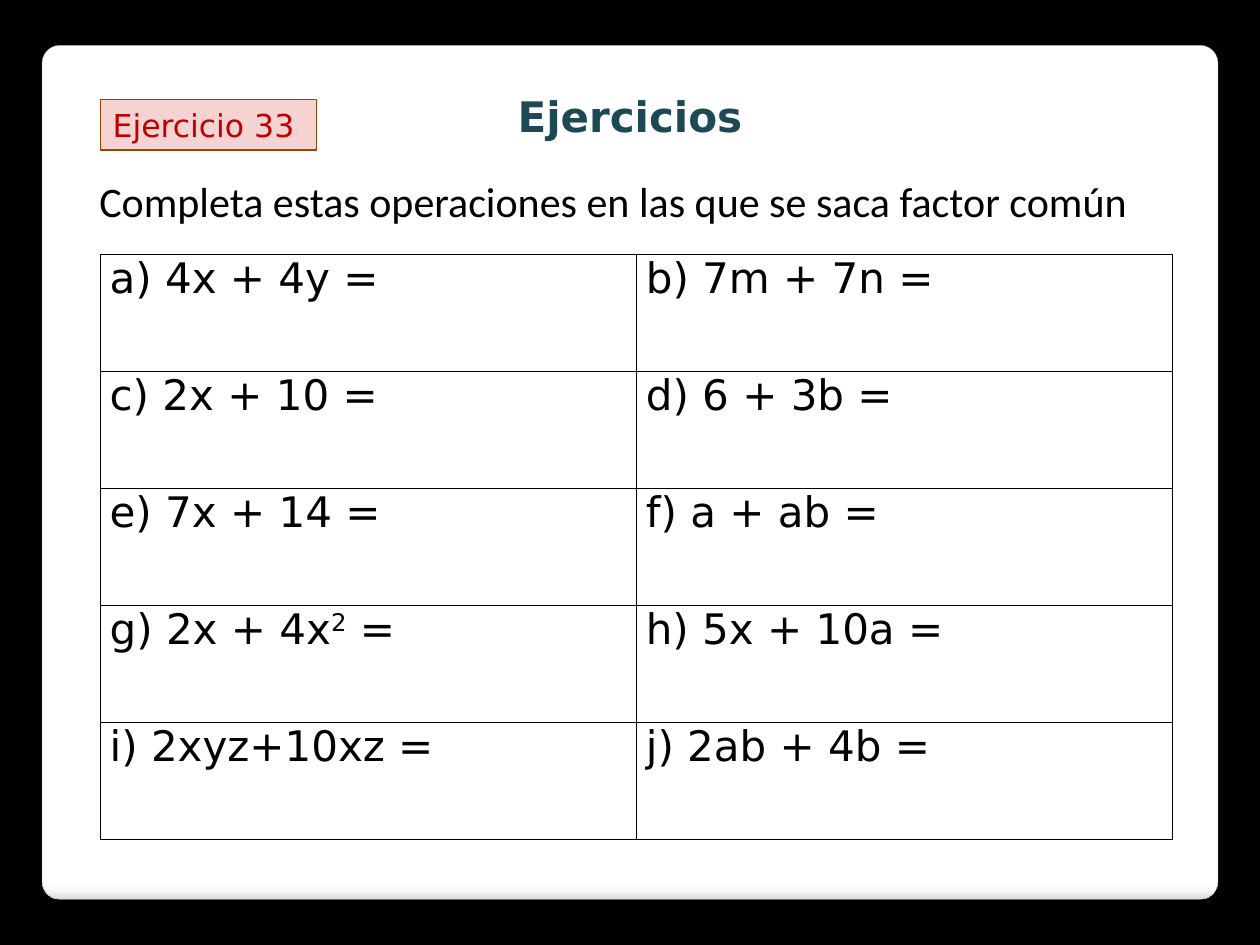
from lxml import etree
from pptx import Presentation
from pptx.dml.color import RGBColor
from pptx.enum.shapes import MSO_SHAPE
from pptx.enum.text import PP_ALIGN
from pptx.oxml import parse_xml
from pptx.oxml.ns import qn
from pptx.util import Pt

RECT, ROUND = MSO_SHAPE.RECTANGLE, MSO_SHAPE.ROUNDED_RECTANGLE
LEFT, CENTER = PP_ALIGN.LEFT, PP_ALIGN.CENTER
BLACK = RGBColor(0, 0, 0)
GRAY = RGBColor(0xA4, 0xA4, 0xA4)
TEAL = RGBColor(0x1C, 0x49, 0x54)
RED = RGBColor(0xC0, 0, 0)
PINK = RGBColor(0xF5, 0xD3, 0xD3)
BROWN = RGBColor(0x96, 0x43, 0x05)
SANS, BODY = "DejaVu Sans", "Calibri"
NS = "http://schemas.openxmlformats.org/drawingml/2006/main"

# Content: "^" marks the next character as a superscript
TITLE = "Ejercicios"
LABEL = "Ejercicio 33"
TASK = "Completa estas operaciones en las que se saca factor común"
SUMS = [
    ("a) 4x + 4y =", "b) 7m + 7n ="),
    ("c) 2x + 10 =", "d) 6 + 3b ="),
    ("e) 7x + 14 =", "f) a + ab ="),
    ("g) 2x + 4x^2 =", "h) 5x + 10a ="),
    ("i) 2xyz+10xz =", "j) 2ab + 4b ="),
]
STOPS = [(0, "FFFFFF"), (98, "FFFFFF"), (99, "F7F7F7"), (100, "DADADA")]
COL_W, ROW_H = 306.4, 66.85


def style(para, font, size, color, bold=False, align=LEFT):
    para.alignment = align
    para.font.name, para.font.size = font, Pt(size)
    para.font.color.rgb, para.font.bold = color, bold


def add_box(kind, box, line, width):
    shape = slide.shapes.add_shape(kind, *map(Pt, box))
    shape.shadow.inherit = False
    shape.line.color.rgb, shape.line.width = line, Pt(width)
    return shape


def add_text(text, box, *look, **more):
    frame = slide.shapes.add_textbox(*map(Pt, box)).text_frame
    frame.word_wrap = True
    frame.text = text
    style(frame.paragraphs[0], *look, **more)


def add_sum(para, text):
    base, _, rest = text.partition("^")
    para.add_run().text = base
    if rest:
        power = para.add_run()
        power.text = rest[0]
        power._r.get_or_add_rPr().set("baseline", "30000")
        para.add_run().text = rest[1:]


def add_edges(cell):
    props = cell._tc.get_or_add_tcPr()
    for i, side in enumerate(("lnL", "lnR", "lnT", "lnB")):
        props.insert(i, parse_xml(
            f'<a:{side} xmlns:a="{NS}" w="12700"><a:solidFill>'
            f'<a:srgbClr val="{BLACK}"/></a:solidFill></a:{side}>'))


deck = Presentation()
deck.slide_width, deck.slide_height = Pt(720), Pt(540)
slide = deck.slides.add_slide(deck.slide_layouts[6])
slide.background.fill.solid()
slide.background.fill.fore_color.rgb = BLACK

# White panel with a shaded foot and a soft shadow
panel = add_box(ROUND, (24, 25.9, 672, 488), GRAY, 0.16)
panel.adjustments[0] = 0.021
panel.fill.gradient()
panel.fill.gradient_angle = 270
stops = panel._element.spPr.find(".//" + qn("a:gsLst"))
for old in list(stops):
    stops.remove(old)
for pos, color in STOPS:
    stop = etree.SubElement(stops, qn("a:gs"), pos=str(pos * 1000))
    etree.SubElement(stop, qn("a:srgbClr"), val=color)
panel._element.spPr.find(qn("a:effectLst")).append(parse_xml(
    f'<a:outerShdw xmlns:a="{NS}" blurRad="{Pt(6)}" dist="{Pt(4)}" '
    'dir="5400000" rotWithShape="0"><a:srgbClr val="000000">'
    '<a:alpha val="25000"/></a:srgbClr></a:outerShdw>'))

# Heading, exercise label and task
add_text(TITLE, (28, 48.2, 664, 36), SANS, 24, TEAL, bold=True, align=CENTER)
label = add_box(RECT, (57.3, 56.7, 123.8, 29.1), BROWN, 0.75)
label.fill.solid()
label.fill.fore_color.rgb = PINK
label.text_frame.text = LABEL
style(label.text_frame.paragraphs[0], SANS, 18, RED)
add_text(TASK, (49.7, 96.5, 620, 36), BODY, 24, BLACK)

# Table of sums
rows, cols = len(SUMS), len(SUMS[0])
table = slide.shapes.add_table(
    rows, cols, Pt(57.3), Pt(145.4), Pt(cols * COL_W), Pt(rows * ROW_H)).table
table.first_row = table.horz_banding = False
for col in table.columns:
    col.width = Pt(COL_W)
for row, texts in zip(table.rows, SUMS):
    row.height = Pt(ROW_H)
    for cell, text in zip(row.cells, texts):
        cell.fill.background()
        cell.margin_left = cell.margin_right = Pt(5.4)
        cell.margin_top = cell.margin_bottom = 0
        para = cell.text_frame.paragraphs[0]
        add_sum(para, text)
        style(para, SANS, 24, BLACK)
        add_edges(cell)

deck.save("out.pptx")
